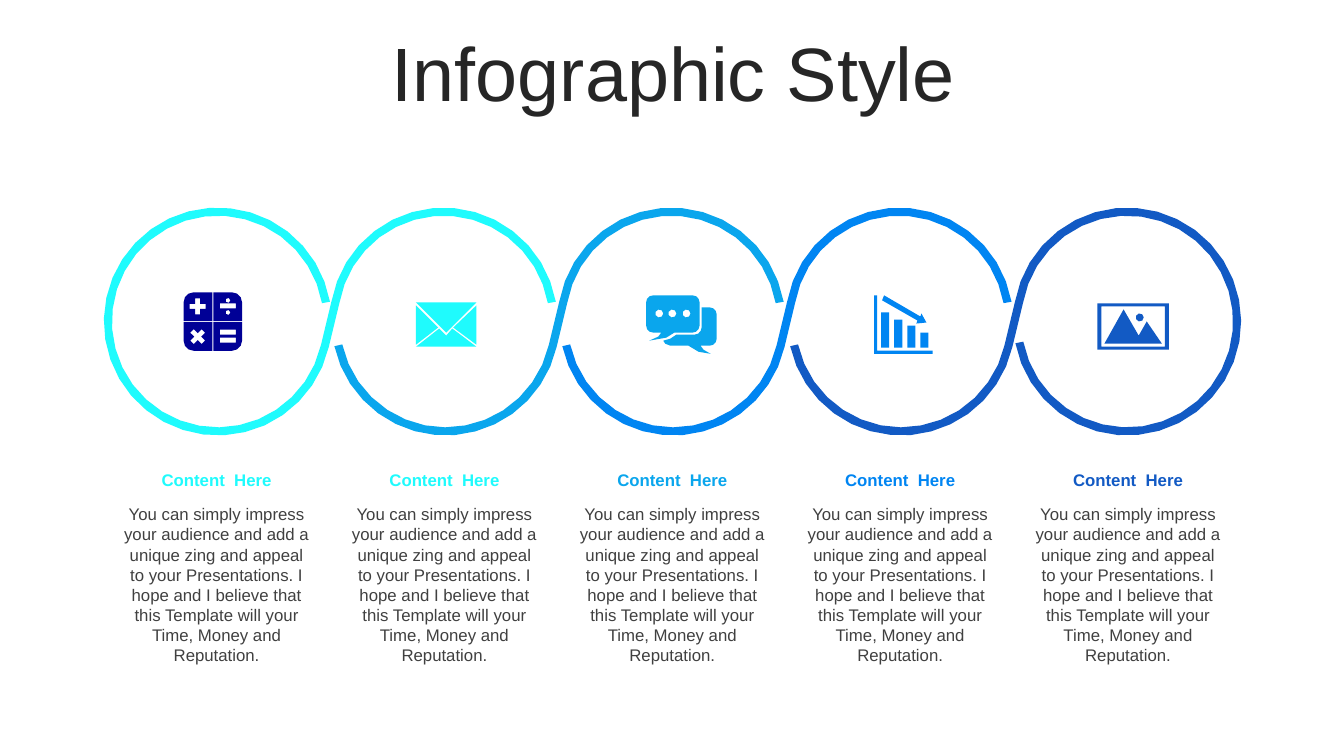
"""Build the five-circle ribbon infographic slide."""
from dataclasses import dataclass
from math import acos, ceil, cos, degrees, radians, sin

from pptx import Presentation
from pptx.dml.color import RGBColor
from pptx.enum.text import MSO_ANCHOR, MSO_AUTO_SIZE, PP_ALIGN
from pptx.util import Inches, Pt

CENTER = PP_ALIGN.CENTER
TOP, MIDDLE = MSO_ANCHOR.TOP, MSO_ANCHOR.MIDDLE
FIXED, GROW = MSO_AUTO_SIZE.NONE, MSO_AUTO_SIZE.SHAPE_TO_FIT_TEXT

NAVY = RGBColor(0x00, 0x00, 0x96)
CYAN = RGBColor(0x1F, 0xFB, 0xFD)
SKY = RGBColor(0x0A, 0xA6, 0xED)
BLUE = RGBColor(0x00, 0x85, 0xF2)
DEEP = RGBColor(0x12, 0x5A, 0xC4)
DARK = RGBColor(0x26, 0x26, 0x26)
GREY = RGBColor(0x40, 0x40, 0x40)

WIDE, HIGH = 13.33, 7.5
LEFT, COL, ROW = 1.03, 2.26, HIGH / 15
MID = 6.38 * ROW
OUTER = COL / 2
INNER = OUTER - 0.08
UNITS = 1000
SLACK = 0.005

HEAD = "Content  Here"
BODY = ("You can simply impress your audience and add a unique zing and appeal "
        "to your Presentations. I hope and I believe that this Template will "
        "your Time, Money and Reputation.")

Point = tuple[float, float]
Loop = list[Point]


@dataclass
class Panel:
    tint: RGBColor
    fill: RGBColor
    col: float
    row: float
    icon: list[Loop]


@dataclass
class Ribbon:
    tint: RGBColor
    start: float = -192.5
    end: float = -10


def across(col: float) -> float:
    return LEFT + col * COL


def arc(x: float, y: float, r: float, start: float, end: float) -> Loop:
    widest = 2 * degrees(acos(1 - SLACK / r))
    steps = ceil(abs(end - start) / widest)
    turns = [radians(start + (end - start) * n / steps) for n in range(steps + 1)]
    return [(x + r * cos(t), y + r * sin(t)) for t in turns]


def box(x: float, y: float, w: float, h: float) -> Loop:
    return [(x, y), (x + w, y), (x + w, y + h), (x, y + h)]


def disc(x: float, y: float, r: float) -> Loop:
    return arc(x, y, r, 0, 360)[:-1]


def cross(x: float, y: float, turn: float) -> Loop:
    arm, half = 0.08, 0.025
    edge = [(arm, -half), (arm, half), (half, half)]
    loop = []
    for quad in range(4):
        t = radians(turn + 90 * quad)
        loop += [(x + a * cos(t) - b * sin(t), y + a * sin(t) + b * cos(t))
                 for a, b in edge]
    return loop


def tile(h: int, v: int) -> Loop:
    gap, half = 0.005, 0.29
    loop = [(gap, gap), (half, gap), *arc(0.19, 0.19, 0.1, 0, 90), (gap, half)]
    return [(half + h * x, half + v * y) for x, y in loop]


def draw(slide, loops: list[Loop], fill: RGBColor, left: float = 0, top: float = 0) -> None:
    rings = [[((left + x) * UNITS, (top + y) * UNITS) for x, y in loop] for loop in loops]
    pen = slide.shapes.build_freeform(*rings[0][0], scale=Inches(1) / UNITS)
    for n, ring in enumerate(rings):
        if n:
            pen.move_to(*ring[0])
        pen.add_line_segments(ring[1:], close=True)
    shape = pen.convert_to_shape()
    shape.shadow.inherit = False
    shape.fill.solid()
    shape.fill.fore_color.rgb = fill
    shape.line.fill.background()


def link(slide, col: int, band: Ribbon) -> None:
    low = across(col + 0.5)
    high = across(col + 1.5) - 0.02
    loop = [*arc(high, MID, OUTER, -170, band.end),
            *arc(high, MID, INNER, band.end, -170),
            *arc(low, MID, OUTER, -347, band.start),
            *arc(low, MID, INNER, band.start, -347)]
    draw(slide, [loop], band.tint)


def write(slide, text: str, col: float, row: float, cols: float, rows: float, *,
          size: float = 12, tint: RGBColor = GREY, bold: bool = False,
          anchor=TOP, fit=GROW, space: float = 1) -> None:
    area = slide.shapes.add_textbox(Inches(across(col)), Inches(row * ROW),
                                    Inches(cols * COL), Inches(rows * ROW))
    frame = area.text_frame
    frame.word_wrap = True
    frame.auto_size = fit
    frame.vertical_anchor = anchor
    para = frame.paragraphs[0]
    para.text = text
    para.alignment = CENTER
    para.line_spacing = space
    font = para.runs[0].font
    font.name, font.size, font.bold = "Arial", Pt(size), bold
    font.color.rgb = tint


SUMS = [tile(h, v) for h in (-1, 1) for v in (-1, 1)] + [
    cross(0.14, 0.14, 0), cross(0.14, 0.44, 45),
    *[box(0.36, y, 0.16, 0.05) for y in (0.11, 0.37, 0.45)],
    *[disc(0.44, y, 0.025) for y in (0.08, 0.2)]]
MAIL = [
    [(0.36, 0.26), (0.6, 0.44), (0, 0.44), (0.23, 0.26), (0.3, 0.33)],
    [(0.6, 0.03), (0.6, 0.42), (0.37, 0.25)],
    [(0, 0.03), (0.22, 0.25), (0, 0.42)],
    [(0, 0), (0.6, 0), (0.3, 0.3)]]
CHAT = [disc(x, 0.18, 0.04) for x in (0.13, 0.26, 0.4)] + [
    [*arc(0.07, 0.07, 0.07, 180, 270), *arc(0.46, 0.07, 0.07, 270, 360),
     *arc(0.46, 0.3, 0.07, 0, 90), (0.28, 0.37), (0.2, 0.42), (0.03, 0.45),
     (0.12, 0.41), (0.15, 0.37), *arc(0.07, 0.3, 0.07, 90, 180)],
    [(0.55, 0.12), *arc(0.63, 0.19, 0.07, 270, 360), *arc(0.63, 0.43, 0.07, 0, 90),
     (0.54, 0.5), (0.57, 0.54), (0.64, 0.58), (0.52, 0.56), (0.42, 0.5),
     (0.24, 0.5), (0.19, 0.48), (0.17, 0.45), (0.24, 0.43), (0.3, 0.39),
     *arc(0.48, 0.32, 0.07, 90, 0)]]
BARS = [box(0.07 + 0.13 * n, top, 0.08, 0.52 - top)
        for n, top in enumerate((0.17, 0.24, 0.3, 0.37))] + [
    [(0.1, 0), (0.46, 0.21), (0.47, 0.18), (0.52, 0.27), (0.42, 0.28),
     (0.43, 0.25), (0.08, 0.05)],
    [(0, 0), (0.03, 0), (0.03, 0.55), (0.58, 0.55), (0.58, 0.58), (0, 0.58)]]
PHOTO = [
    disc(0.42, 0.14, 0.04),
    [(0.26, 0.06), (0.41, 0.32), (0.49, 0.18), (0.64, 0.4), (0.07, 0.4)],
    box(0.04, 0.03, 0.63, 0.4), box(0, 0, 0.71, 0.46)]

PANELS = [Panel(CYAN, NAVY, 0.35, 5.8, SUMS),
          Panel(CYAN, CYAN, 0.37, 6, MAIL),
          Panel(SKY, SKY, 0.38, 5.86, CHAT),
          Panel(BLUE, BLUE, 0.38, 5.86, BARS),
          Panel(DEEP, DEEP, 0.36, 6.02, PHOTO)]
RIBBONS = [Ribbon(CYAN, start=-10), Ribbon(SKY), Ribbon(BLUE), Ribbon(DEEP, end=169)]


def main() -> None:
    deck = Presentation()
    deck.slide_width, deck.slide_height = Inches(WIDE), Inches(HIGH)
    slide = deck.slides.add_slide(deck.slide_layouts[6])
    write(slide, "Infographic Style", -0.3, 0.74, 5.6, 1.58, size=54, tint=DARK,
          anchor=MIDDLE, fit=FIXED, space=0.9)
    for col, band in enumerate(RIBBONS):
        link(slide, col, band)
    for col, panel in enumerate(PANELS):
        write(slide, BODY, col + 0.04, 9.9, 0.91, 3.44)
        write(slide, HEAD, col + 0.04, 9.22, 0.91, 0.6, tint=panel.tint, bold=True)
        draw(slide, panel.icon, panel.fill, across(col + panel.col), panel.row * ROW)
    deck.save("out.pptx")


if __name__ == "__main__":
    main()
